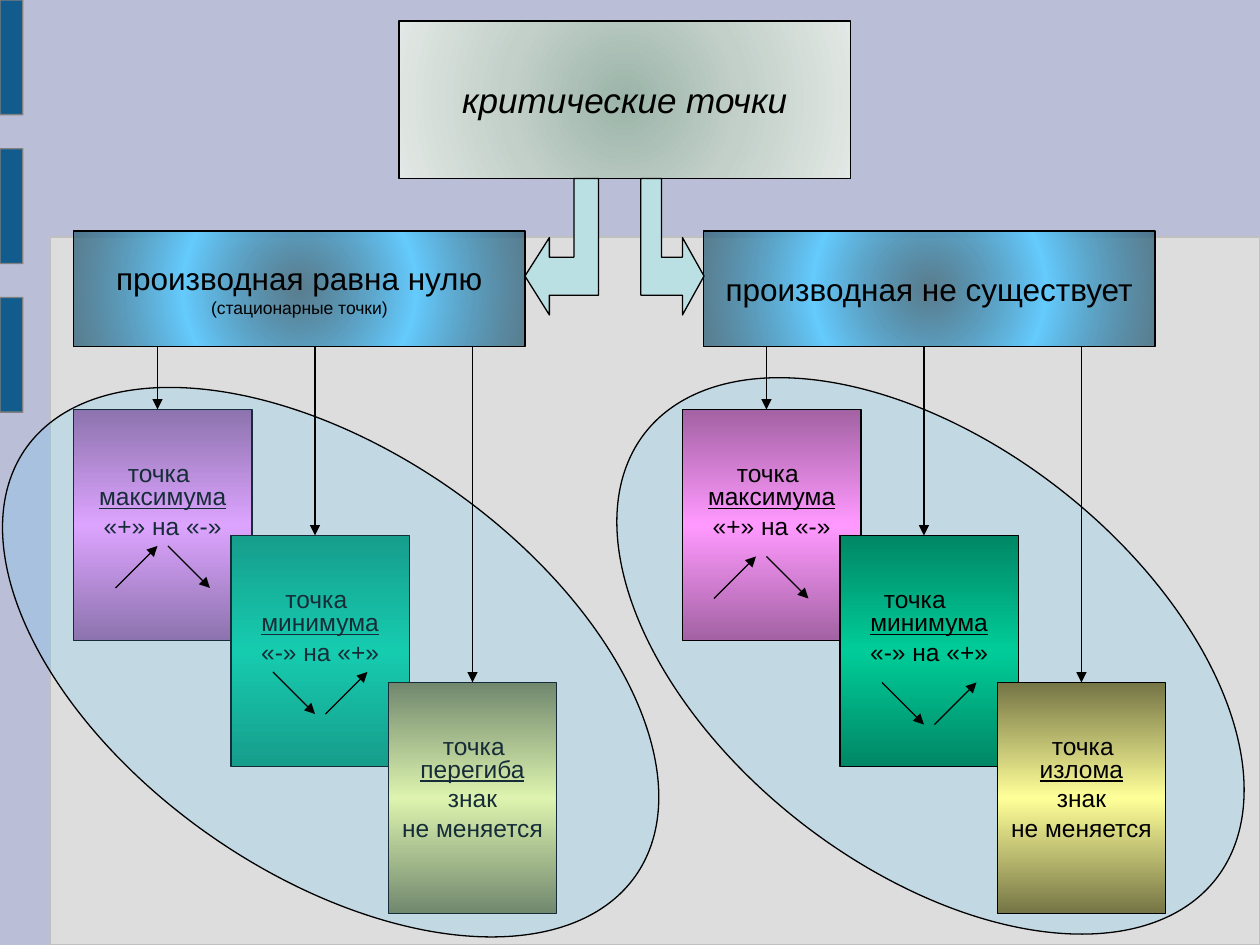
from pptx import Presentation
from pptx.util import Pt
from pptx.dml.color import RGBColor
from pptx.enum.shapes import MSO_SHAPE, MSO_CONNECTOR
from pptx.enum.text import MSO_ANCHOR, PP_ALIGN
from pptx.oxml.ns import qn
from lxml.etree import SubElement

HUES = {
    "back": "BABED6", "panel": "DDDDDD", "edge": "C0C0C0", "bar": "125C8D",
    "grey": "808080", "ink": "000000", "sky": "66CCFF", "steel": "2F5E75",
    "sage": "9BB4A8", "mist": "C3D0CA", "pale": "E2E8E5", "bent": "BBE0E3",
    "plum": "985B98", "mauve": "A362A3", "pink": "FF99FF", "pine": "00906C",
    "moss": "008765", "mint": "00CC99", "olive": "757546", "lemon": "FFFF99",
}
BASE = {"name": "Arial", "size": Pt(14)}
FRAME = {"word_wrap": False, "vertical_anchor": MSO_ANCHOR.MIDDLE}


def paint(shape, fill, line="ink", path=None, alpha=None):
    shape.shadow.inherit = False
    shape.line.color.rgb = RGBColor.from_string(HUES[line])
    shape.line.width = Pt(0.75)
    if isinstance(fill, str):
        shape.fill.solid()
        shape.fill.fore_color.rgb = RGBColor.from_string(HUES[fill])
        if alpha:
            tint = next(shape.element.spPr.iter(qn("a:srgbClr")))
            SubElement(tint, qn("a:alpha"), val=str(alpha * 1000))
        return
    shape.fill.gradient()
    grad = shape.element.spPr.find(qn("a:gradFill"))
    for part in list(grad):
        grad.remove(part)
    stops = SubElement(grad, qn("a:gsLst"))
    for pos, hue in zip((0, 50000, 100000), fill):
        stop = SubElement(stops, qn("a:gs"), pos=str(pos))
        tint = SubElement(stop, qn("a:srgbClr"), val=HUES[hue])
        if hue == "steel":
            SubElement(tint, qn("a:alpha"), val="75000")
    if path:
        ring = SubElement(grad, qn("a:path"), path=path)
        SubElement(ring, qn("a:fillToRect"), l="50000", t="50000", r="50000", b="50000")
    else:
        SubElement(grad, qn("a:lin"), ang="5400000", scaled="1")


def write(shape, lines, align=PP_ALIGN.CENTER):
    frame = shape.text_frame
    for key, val in FRAME.items():
        setattr(frame, key, val)
    for i, (text, form) in enumerate(lines):
        para = frame.add_paragraph() if i else frame.paragraphs[0]
        para.alignment = align
        run = para.add_run()
        run.text = text
        run.font.color.rgb = RGBColor.from_string(HUES["ink"])
        for key, val in {**BASE, **form}.items():
            setattr(run.font, key, val)


deck = Presentation()
deck.slide_width, deck.slide_height = Pt(720), Pt(540)
slide = deck.slides.add_slide(deck.slide_layouts[6])
slide.background.fill.solid()
slide.background.fill.fore_color.rgb = RGBColor.from_string(HUES["back"])
shapes = slide.shapes

panel = shapes.add_shape(MSO_SHAPE.RECTANGLE, Pt(29), Pt(135.4), Pt(691), Pt(404.6))
paint(panel, "panel", "edge")
for i in range(3):
    bar = shapes.add_shape(MSO_SHAPE.ROUNDED_RECTANGLE, 0, Pt(i * 85), Pt(13), Pt(65.5))
    bar.adjustments[0] = 0.01
    paint(bar, "bar", "grey")

blue = ("steel", "sky", "steel")
heads = [
    (228, 12, 90, ("sage", "mist", "pale"),
     [("критические точки", {"size": Pt(20), "italic": True})]),
    (42, 132, 66, blue,
     [("производная равна нулю", {"size": Pt(18)}),
      ("(стационарные точки)", {"size": Pt(10)})]),
    (402, 132, 66, blue, [("производная не существует", {"size": Pt(18)})]),
]
for x, y, high, fill, lines in heads:
    head = shapes.add_shape(MSO_SHAPE.RECTANGLE, Pt(x), Pt(y), Pt(258), Pt(high))
    paint(head, fill, path="circle")
    write(head, lines)

maxi = ("максимума", "«+» на «-»")
mini = ("минимума", "«-» на «+»")
rest = ("знак", "не меняется")
sides = [
    (42, (("plum", "pink"), ("pine", "mint"), ("olive", "lemon")),
     (maxi, mini, ("перегиба", *rest)),
     [(-23.8, 257.8, 425.5, 241.2, 35), (324.7, 254.2, 414, 241.2, 38)]),
    (390, (("mauve", "pink"), ("moss", "mint"), ("olive", "lemon")),
     (maxi, mini, ("излома", *rest)), []),
]
tops = (234, 306, 390)
wides = (102, 102, 96)
rays = []
for left, fills, texts, ovals in sides:
    for i, (top, wide, (dark, light), words) in enumerate(zip(tops, wides, fills, texts)):
        x = left + i * 90
        card = shapes.add_shape(MSO_SHAPE.RECTANGLE, Pt(x), Pt(top), Pt(wide), Pt(132))
        paint(card, (dark, light, dark))
        write(card, [(word, {"underline": n == 0}) for n, word in enumerate(words)])
        if len(words) == 2:
            card.text_frame.margin_bottom = Pt(20)
        rays.append((x + 48, 198, x + 48, top))
    for i, top in enumerate(tops):
        shift = 18 if left == 390 and i == 1 else 24
        note = shapes.add_textbox(Pt(left + i * 90 + shift), Pt(top + 24), Pt(49.7), Pt(24.5))
        write(note, [("точка", {})], PP_ALIGN.LEFT)
    for x, y, wide, high, turn in ovals:
        oval = shapes.add_shape(MSO_SHAPE.OVAL, Pt(x), Pt(y), Pt(wide), Pt(high))
        oval.rotation = turn
        paint(oval, "sky", alpha=22)

for x, y, dip in [(66, 312, 156), (408, 318, 504)]:
    rays += [(x, y + 24, x + 24, y), (x + 30, y, x + 54, y + 24)]
    y += 72
    rays += [(dip, y, dip + 24, y + 24), (dip + 30, y + 24, dip + 54, y)]
for x, y, far, low in rays:
    ray = shapes.add_connector(MSO_CONNECTOR.STRAIGHT, Pt(x), Pt(y), Pt(far), Pt(low))
    ray.line.color.rgb = RGBColor.from_string(HUES["ink"])
    ray.line.width = Pt(0.75)
    SubElement(ray.line._get_or_add_ln(), qn("a:tailEnd"), type="triangle")
    SubElement(ray.element.spPr, qn("a:effectLst"))

for tip, neck, near, far in [(300, 314, 328, 342), (402.3, 390, 378, 366.2)]:
    spots = [(neck, 135.8), (neck, 147), (near, 147), (near, 102),
             (far, 102), (far, 168.7), (neck, 168.7), (neck, 180)]
    form = shapes.build_freeform(Pt(tip), Pt(157.8))
    form.add_line_segments([(Pt(x), Pt(y)) for x, y in spots], close=True)
    paint(form.convert_to_shape(), "bent")

deck.save("out.pptx")
